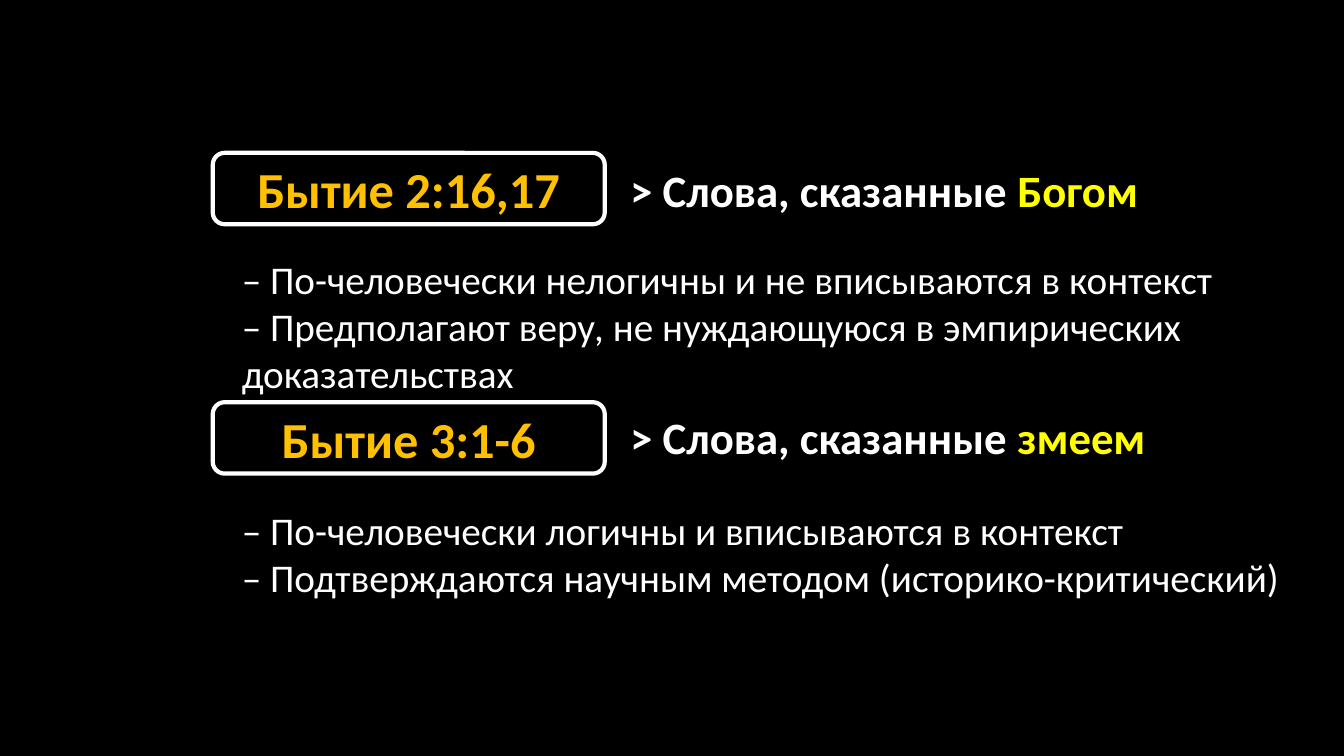
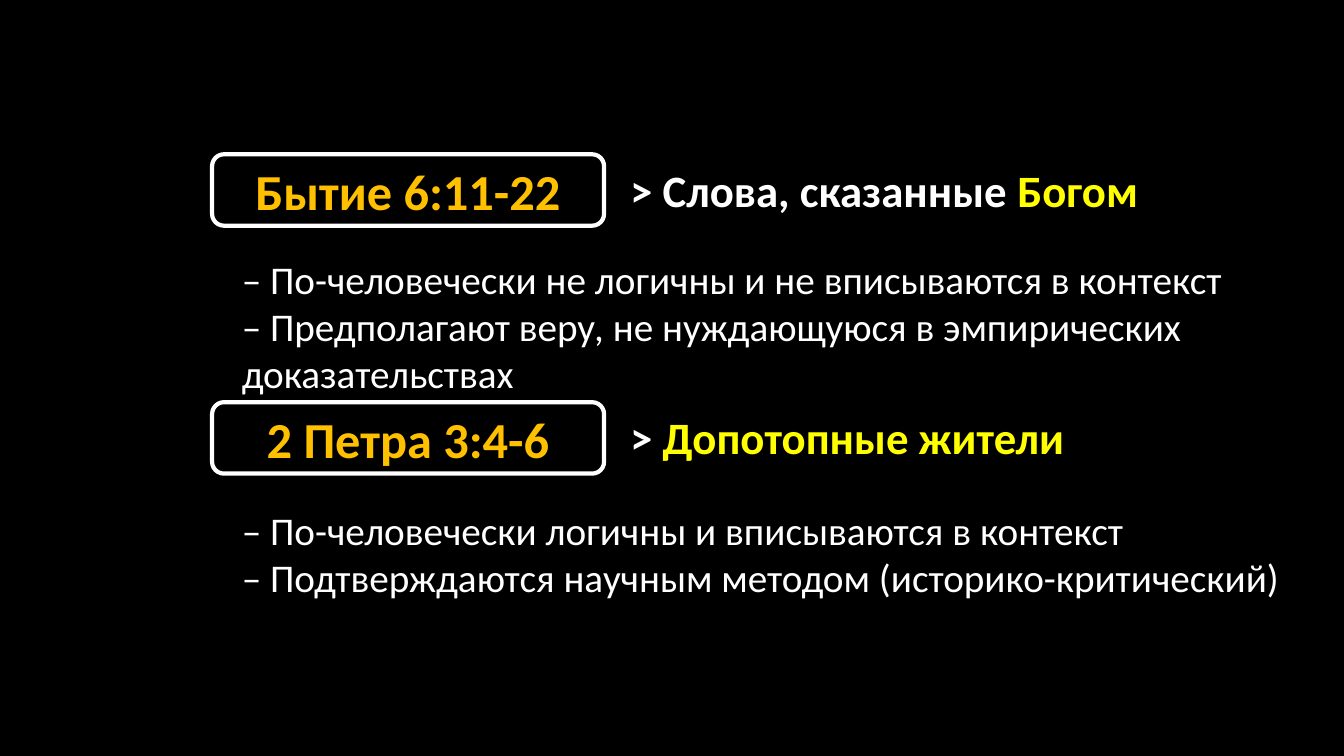
from dataclasses import dataclass

from pptx import Presentation
from pptx.dml.color import RGBColor
from pptx.enum import shapes, text
from pptx.util import Pt


# Theme: colours, type sizes and font
@dataclass(frozen=True)
class Theme:
    black: RGBColor = RGBColor.from_string("000000")
    white: RGBColor = RGBColor.from_string("FFFFFF")
    amber: RGBColor = RGBColor.from_string("FFC000")
    yellow: RGBColor = RGBColor.from_string("FFFF00")
    font: str = "Calibri"
    reference_size: int = 36
    speaker_size: int = 32
    trait_size: int = 28
    outline: int = 3


THEME = Theme()


def add_run(paragraph, words, *, size, color=THEME.white, bold=False):
    run = paragraph.add_run()
    run.text = words
    run.font.name = THEME.font
    run.font.size = Pt(size)
    run.font.bold = bold
    run.font.color.rgb = color


class Deck:
    def __init__(self):
        self.prs = Presentation()
        self.prs.slide_width, self.prs.slide_height = Pt(960), Pt(540)
        background = self.prs.slide_master.background.fill
        background.solid()
        background.fore_color.rgb = THEME.black
        self.slide = None

    def new_slide(self):
        blank_layout = self.prs.slide_layouts[6]
        self.slide = self.prs.slides.add_slide(blank_layout)

    def text_frame(self, left, top, width, height):
        box = self.slide.shapes.add_textbox(Pt(left), Pt(top), Pt(width), Pt(height))
        box.text_frame.word_wrap = True
        return box.text_frame

    def reference(self, words, left, top):
        """Framed Bible reference."""
        frame = self.slide.shapes.add_shape(
            shapes.MSO_SHAPE.ROUNDED_RECTANGLE, Pt(left), Pt(top), Pt(280), Pt(51))
        frame.shadow.inherit = False
        frame.fill.solid()
        frame.fill.fore_color.rgb = THEME.black
        frame.line.color.rgb = THEME.white
        frame.line.width = Pt(THEME.outline)
        frame.text_frame.vertical_anchor = text.MSO_ANCHOR.MIDDLE
        paragraph = frame.text_frame.paragraphs[0]
        paragraph.alignment = text.PP_ALIGN.CENTER
        add_run(paragraph, words, size=THEME.reference_size, color=THEME.amber, bold=True)

    def speaker(self, lead, name, top):
        """Heading that ends with the highlighted speaker."""
        paragraph = self.text_frame(443, top, 394, 46).paragraphs[0]
        add_run(paragraph, lead, size=THEME.speaker_size, bold=True)
        add_run(paragraph, name, size=THEME.speaker_size, color=THEME.yellow, bold=True)

    def traits(self, lines, top, height):
        frame = self.text_frame(165.6, top, 760, height)
        for index, line in enumerate(lines):
            paragraph = frame.add_paragraph() if index else frame.paragraphs[0]
            add_run(paragraph, line, size=THEME.trait_size)


# Content
SPOKEN = "> Слова, сказанные "
FAITH = "– Предполагают веру, не нуждающуюся в эмпирических доказательствах"
HUMAN_TRAITS = ["– По-человечески логичны и вписываются в контекст",
                "– Подтверждаются научным методом (историко-критический)"]

# Each slide: left edge and tops of the references, then its two passages
SLIDES = [
    (152, (109.2, 287.3), [
        ("Бытие 2:16,17", SPOKEN, "Богом",
         ["– По-человечески нелогичны и не вписываются в контекст", FAITH]),
        ("Бытие 3:1-6", SPOKEN, "змеем", HUMAN_TRAITS)]),
    (151.5, (110.2, 287.3), [
        ("Бытие 6:11-22", SPOKEN, "Богом",
         ["– По-человечески не логичны и не вписываются в контекст", FAITH]),
        ("2 Петра 3:4-6", "> ", "Допотопные жители", HUMAN_TRAITS)]),
]

# Speaker top, traits top and traits height of the two passages
ROWS = [(112.4, 178.6, 109), (289.4, 358, 75)]


def main():
    deck = Deck()
    for reference_left, reference_tops, passages in SLIDES:
        deck.new_slide()
        for passage, reference_top, row in zip(passages, reference_tops, ROWS):
            reference, lead, name, traits = passage
            speaker_top, traits_top, traits_height = row
            deck.reference(reference, reference_left, reference_top)
            deck.speaker(lead, name, speaker_top)
            deck.traits(traits, traits_top, traits_height)
    deck.prs.save("out.pptx")


if __name__ == "__main__":
    main()
